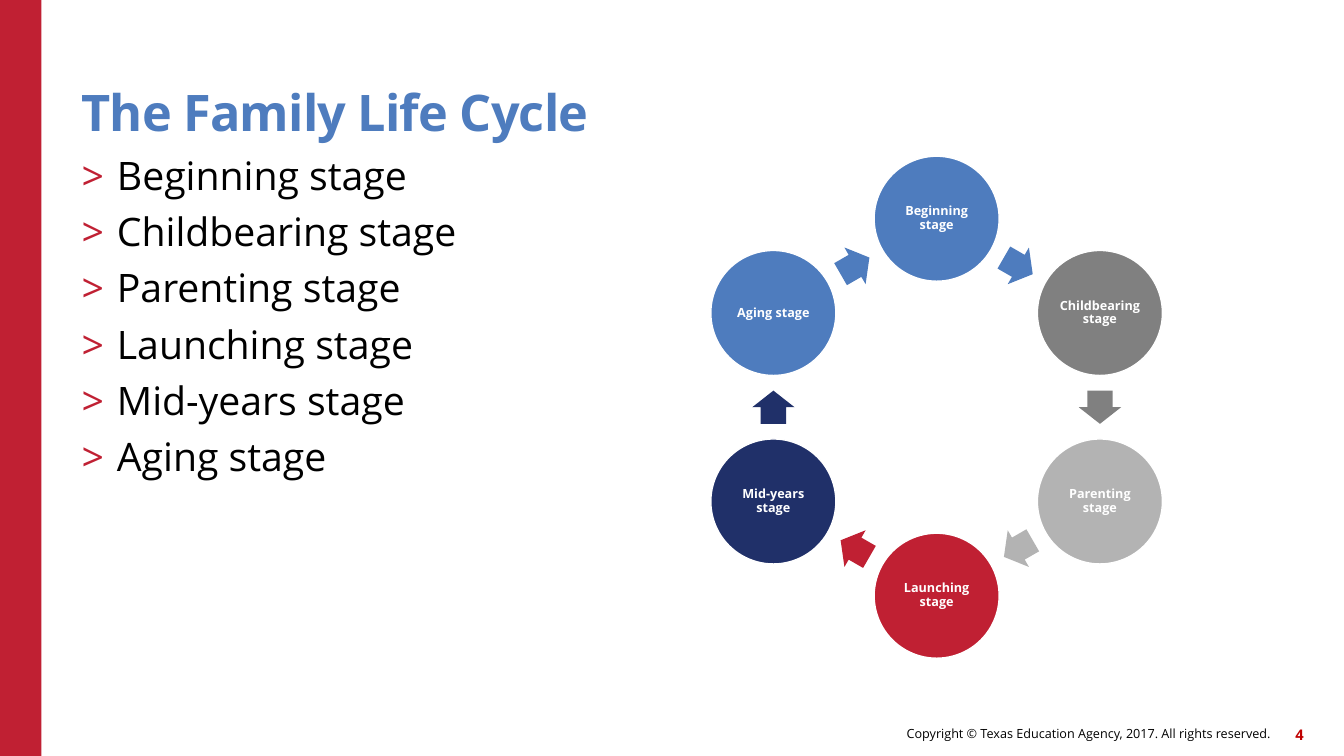
from math import cos, radians, sin

from lxml import etree
from pptx import Presentation
from pptx.dml.color import RGBColor
from pptx.enum.shapes import MSO_SHAPE
from pptx.enum.text import MSO_ANCHOR, MSO_AUTO_SIZE, PP_ALIGN
from pptx.oxml.ns import qn
from pptx.util import Inches, Pt

RECTANGLE, OVAL, ARROW = MSO_SHAPE.RECTANGLE, MSO_SHAPE.OVAL, MSO_SHAPE.RIGHT_ARROW
TOP, MIDDLE, BOTTOM = MSO_ANCHOR.TOP, MSO_ANCHOR.MIDDLE, MSO_ANCHOR.BOTTOM
LEFT, CENTER, RIGHT = PP_ALIGN.LEFT, PP_ALIGN.CENTER, PP_ALIGN.RIGHT
NO_FIT = MSO_AUTO_SIZE.NONE

BLUE = RGBColor(0x4E, 0x7C, 0xBE)
DARK_GRAY = RGBColor(0x80, 0x80, 0x80)
LIGHT_GRAY = RGBColor(0xB3, 0xB3, 0xB3)
RED = RGBColor(0xC0, 0x20, 0x33)
NAVY = RGBColor(0x20, 0x30, 0x69)
NUMBER_RED = RGBColor(0xC0, 0x00, 0x00)
BLACK = RGBColor(0x00, 0x00, 0x00)
WHITE = RGBColor(0xFF, 0xFF, 0xFF)

STAGES = [
    ("Beginning stage", BLUE),
    ("Childbearing stage", DARK_GRAY),
    ("Parenting stage", LIGHT_GRAY),
    ("Launching stage", RED),
    ("Mid-years stage", NAVY),
    ("Aging stage", BLUE),
]

prs = Presentation()
prs.slide_width, prs.slide_height = Inches(13.33), Inches(7.5)
slide = prs.slides.add_slide(prs.slide_layouts[1])


def write(paragraph, text, size, color, bold=False, align=LEFT):
    paragraph.alignment = align
    run = paragraph.add_run()
    run.text = text
    run.font.name = "Open Sans"
    run.font.size = Pt(size)
    run.font.bold = bold
    run.font.color.rgb = color
    return run


def set_frame(shape, anchor, inset=0):
    """Give the shape's text fixed-size wrapping, an anchor and equal insets."""
    frame = shape.text_frame
    frame.word_wrap = True
    frame.auto_size = NO_FIT
    frame.vertical_anchor = anchor
    frame.margin_left = frame.margin_right = Inches(inset)
    frame.margin_top = frame.margin_bottom = Inches(inset)
    return frame.paragraphs[0]


# Side band and footer
band = slide.shapes.add_shape(RECTANGLE, 0, 0, Inches(0.41), prs.slide_height)
band.shadow.inherit = False
band.fill.solid()
band.fill.fore_color.rgb = RED
band.line.fill.background()

footer = [
    (6.14, 7.12, 6.46, "Copyright © Texas Education Agency, 2017. All rights reserved.", 9, BLACK, False),
    (12.51, 7.13, 0.42, "4", 10.5, NUMBER_RED, True),
]
for left, top, width, text, size, color, bold in footer:
    box = slide.shapes.add_textbox(Inches(left), Inches(top), Inches(width), Inches(0.32))
    write(set_frame(box, MIDDLE), text, size, color, bold, RIGHT)

# Title
title = slide.shapes.title
title.left, title.top = Inches(0.81), Inches(0.45)
title.width, title.height = Inches(11), Inches(0.96)
heading = set_frame(title, BOTTOM)
heading.line_spacing = 0.9
heading_run = write(heading, "The Family Life Cycle", 36, BLUE, True)
heading_run.font._element.set("spc", "-60")

# Stage list
stage_list = slide.placeholders[1]
stage_list.left, stage_list.top = Inches(0.81), Inches(1.55)
stage_list.width, stage_list.height = Inches(5.86), Inches(5.18)
item = set_frame(stage_list, TOP)
for i, (stage, _) in enumerate(STAGES):
    if i:
        item = stage_list.text_frame.add_paragraph()
    item.space_before = Pt(10 if i else 0)
    item.line_spacing = 0.9
    props = item._p.get_or_add_pPr()
    props.set("marL", str(Inches(0.35)))
    props.set("indent", str(-Inches(0.35)))
    bullet_color = etree.SubElement(props, qn("a:buClr"))
    etree.SubElement(bullet_color, qn("a:srgbClr"), val=str(RED))
    etree.SubElement(props, qn("a:buFont"), typeface="Open Sans")
    etree.SubElement(props, qn("a:buChar"), char=">")
    write(item, stage, 28, BLACK)

# Cycle: a circle every 60 degrees, with an arrow halfway to the next one
CENTER_X, CENTER_Y, RADIUS = 9.29, 4.04, 1.87
CIRCLE, ARROW_LENGTH, ARROW_WIDTH = 1.24, 0.33, 0.42
STEP = 360 / len(STAGES)
ARROW_RADIUS = RADIUS * cos(radians(STEP / 2))

for i, (stage, color) in enumerate(STAGES):
    parts = [
        (OVAL, i * STEP, RADIUS, CIRCLE, CIRCLE),
        (ARROW, (i + 0.5) * STEP, ARROW_RADIUS, ARROW_LENGTH, ARROW_WIDTH),
    ]
    for kind, angle, radius, width, height in parts:
        x = CENTER_X + radius * sin(radians(angle))
        y = CENTER_Y - radius * cos(radians(angle))
        part = slide.shapes.add_shape(
            kind, Inches(x - width / 2), Inches(y - height / 2), Inches(width), Inches(height))
        part.shadow.inherit = False
        part.fill.solid()
        part.fill.fore_color.rgb = color
        if kind == OVAL:
            part.line.color.rgb = WHITE
            part.line.width = Pt(1)
            label = set_frame(part, MIDDLE, 0.01)
            label.line_spacing = 0.9
            write(label, stage, 9, WHITE, True, CENTER)
        else:
            part.line.fill.background()
            part.rotation = angle
            part.adjustments[0], part.adjustments[1] = 0.6, 0.5

prs.save("out.pptx")
